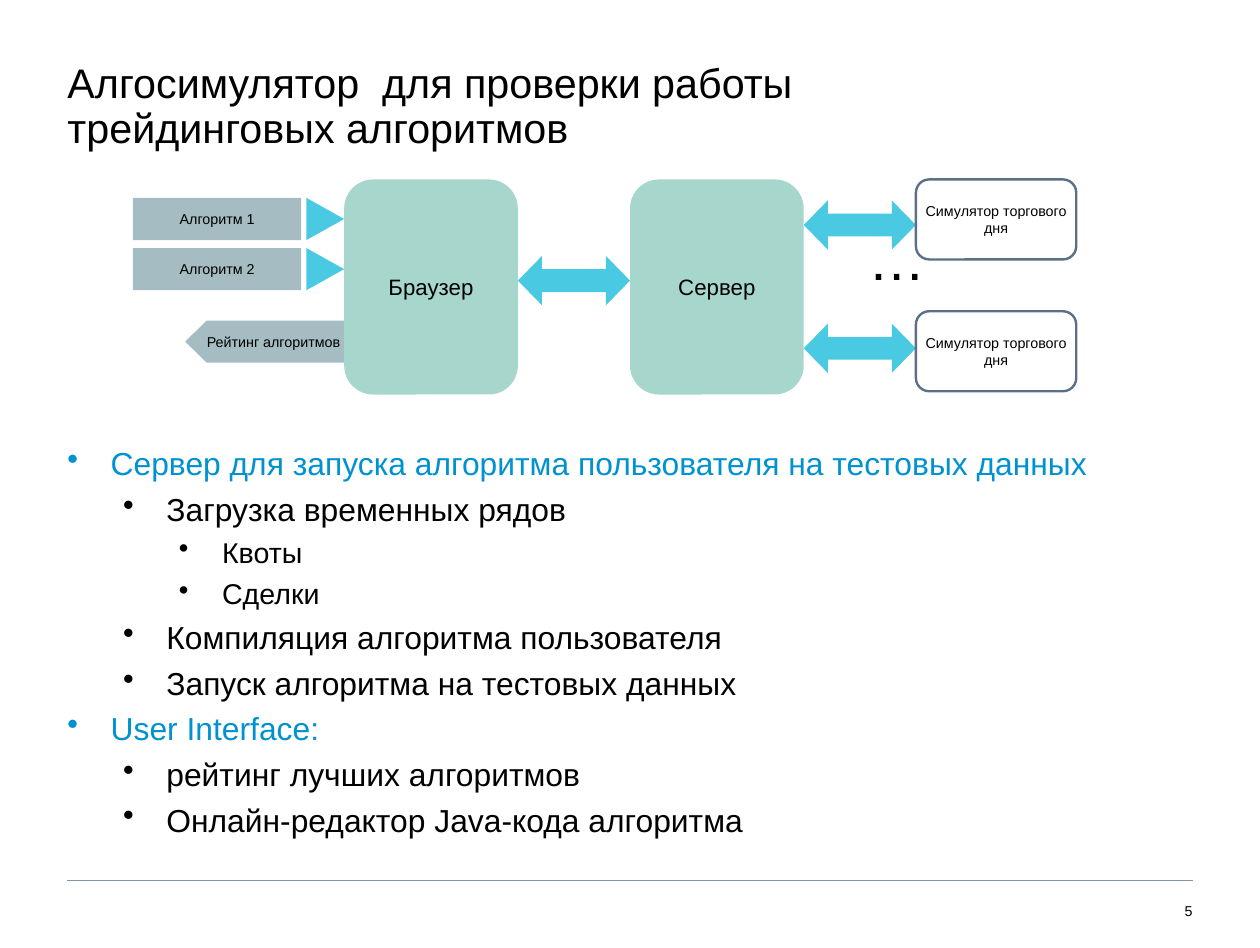
from dataclasses import dataclass

from lxml import etree
from pptx import Presentation
from pptx.dml.color import RGBColor
from pptx.enum.shapes import MSO_CONNECTOR, MSO_SHAPE
from pptx.enum.text import MSO_ANCHOR, MSO_AUTO_SIZE, PP_ALIGN
from pptx.oxml.ns import qn
from pptx.shapes.autoshape import Shape
from pptx.slide import Slide
from pptx.text.text import TextFrame, _Paragraph
from pptx.util import Pt

RECT = MSO_SHAPE.RECTANGLE
ROUNDED = MSO_SHAPE.ROUNDED_RECTANGLE
TRIANGLE = MSO_SHAPE.ISOSCELES_TRIANGLE
PENTAGON = MSO_SHAPE.PENTAGON
DOUBLE_ARROW = MSO_SHAPE.LEFT_RIGHT_ARROW
STRAIGHT = MSO_CONNECTOR.STRAIGHT
TOP, MIDDLE, BOTTOM = MSO_ANCHOR.TOP, MSO_ANCHOR.MIDDLE, MSO_ANCHOR.BOTTOM
LEFT, CENTER, RIGHT = PP_ALIGN.LEFT, PP_ALIGN.CENTER, PP_ALIGN.RIGHT
GROW = MSO_AUTO_SIZE.SHAPE_TO_FIT_TEXT

FONT = "Arial"
BLACK, BLUE, CYAN = "000000", "0092D0", "4AC9E3"
GRAY, MINT, SLATE, RULE = "A4BCC2", "A7D6CD", "5B7086", "8296AA"

MARGIN = 42.5
CONTENT_WIDTH = 708.5
FOOTER_Y = 554.4
BLOCK_TOP, BLOCK_WIDTH, BLOCK_HEIGHT = 113, 109.4, 135.4
ARROW_WIDTH, ARROW_HEIGHT = 70.6, 31
BROWSER_X = 216.7
BROWSER_RIGHT = BROWSER_X + BLOCK_WIDTH
SERVER_X = BROWSER_RIGHT + ARROW_WIDTH
SERVER_RIGHT = SERVER_X + BLOCK_WIDTH
SIMULATOR_X = SERVER_RIGHT + ARROW_WIDTH
ALGORITHM_TOP, ALGORITHM_STEP = 124.6, 31.6
BULLET_INDENTS = (27.2, 62.3, 97.4)
BULLET_HANGING = 27.2


@dataclass(frozen=True)
class Box:
    left: float
    top: float
    width: float
    height: float


@dataclass(frozen=True)
class Node:
    kind: MSO_SHAPE
    box: Box
    fill: str = ""
    outline: str = ""
    label: str = ""
    size: float = 9
    insets: tuple[float, float, float, float] = (0, 0, 0, 0)
    rotation: float = 0
    adjustments: tuple[float, ...] = ()


@dataclass(frozen=True)
class Caption:
    text: str
    box: Box
    size: float
    insets: tuple[float, float, float, float] = (7.2, 3.6, 7.2, 3.6)
    align: PP_ALIGN = LEFT
    anchor: MSO_ANCHOR = TOP
    wrap: bool = False
    grow: bool = False
    spacing: float | Pt | None = None


@dataclass(frozen=True)
class Bullet:
    text: str
    level: int
    size: float = 20
    color: str = BLACK


def rgb(color: str) -> RGBColor:
    return RGBColor.from_string(color)


def lengths(box: Box) -> tuple[Pt, Pt, Pt, Pt]:
    return Pt(box.left), Pt(box.top), Pt(box.width), Pt(box.height)


def add_run(paragraph: _Paragraph, text: str, size: float, color: str = BLACK) -> None:
    run = paragraph.add_run()
    run.text = text
    run.font.name = FONT
    run.font.size = Pt(size)
    run.font.color.rgb = rgb(color)


def set_frame(frame: TextFrame, insets: tuple[float, float, float, float],
              anchor: MSO_ANCHOR, wrap: bool) -> None:
    left, top, right, bottom = insets
    frame.margin_left, frame.margin_top = Pt(left), Pt(top)
    frame.margin_right, frame.margin_bottom = Pt(right), Pt(bottom)
    frame.vertical_anchor = anchor
    frame.word_wrap = wrap


def draw_node(slide: Slide, node: Node) -> Shape:
    shape = slide.shapes.add_shape(node.kind, *lengths(node.box))
    shape.shadow.inherit = False
    shape.rotation = node.rotation
    for index, value in enumerate(node.adjustments):
        shape.adjustments[index] = value
    if node.fill:
        shape.fill.solid()
        shape.fill.fore_color.rgb = rgb(node.fill)
    else:
        shape.fill.background()
    if node.outline:
        shape.line.color.rgb = rgb(node.outline)
        shape.line.width = Pt(1.5)
    else:
        shape.line.fill.background()
    if node.label:
        set_frame(shape.text_frame, node.insets, MIDDLE, True)
        paragraph = shape.text_frame.paragraphs[0]
        paragraph.alignment = CENTER
        add_run(paragraph, node.label, node.size)
    return shape


def draw_caption(slide: Slide, caption: Caption) -> None:
    frame = slide.shapes.add_textbox(*lengths(caption.box)).text_frame
    set_frame(frame, caption.insets, caption.anchor, caption.wrap)
    if caption.grow:
        frame.auto_size = GROW
    paragraph = frame.paragraphs[0]
    paragraph.alignment = caption.align
    paragraph.line_spacing = caption.spacing
    add_run(paragraph, caption.text, caption.size)


def draw_bullets(slide: Slide, box: Box, bullets: list[Bullet]) -> None:
    frame = slide.shapes.add_textbox(*lengths(box)).text_frame
    set_frame(frame, (0, 2.9, 0, 2.9), TOP, True)
    for index, bullet in enumerate(bullets):
        paragraph = frame.add_paragraph() if index else frame.paragraphs[0]
        paragraph.level = bullet.level
        paragraph.line_spacing = 1.07
        paragraph.space_before = Pt(3)
        properties = paragraph._p.get_or_add_pPr()
        properties.set("marL", str(Pt(BULLET_INDENTS[bullet.level])))
        properties.set("indent", str(-Pt(BULLET_HANGING)))
        etree.SubElement(properties, qn("a:buChar")).set("char", "•")
        add_run(paragraph, bullet.text, bullet.size, bullet.color)


def draw_footer_rule(slide: Slide) -> None:
    rule = slide.shapes.add_connector(
        STRAIGHT, Pt(MARGIN), Pt(FOOTER_Y), Pt(MARGIN + CONTENT_WIDTH), Pt(FOOTER_Y))
    rule.line.color.rgb = rgb(RULE)
    rule.line.width = Pt(0.5)
    etree.SubElement(rule._element.spPr, qn("a:effectLst"))


def diagram_nodes() -> list[Node]:
    nodes = []
    for index, label in enumerate(("Алгоритм 1", "Алгоритм 2")):
        top = ALGORITHM_TOP + index * ALGORITHM_STEP
        nodes.append(Node(RECT, Box(83.7, top, 106, 26.6), GRAY, label=label,
                          insets=(3.6, 1.4, 3.6, 1.4)))
        nodes.append(Node(TRIANGLE, Box(191.5, top + 1.4, 26.6, 23.8), CYAN, rotation=90))
    nodes.append(Node(PENTAGON, Box(116.6, 201.8, 100.1, 26.6), GRAY,
                      rotation=180, adjustments=(0.51,)))
    for left, label in ((BROWSER_X, "Браузер"), (SERVER_X, "Сервер")):
        nodes.append(Node(ROUNDED, Box(left, BLOCK_TOP, BLOCK_WIDTH, BLOCK_HEIGHT),
                          MINT, label=label, size=14))
    for left, top in ((BROWSER_RIGHT, 161.2), (SERVER_RIGHT, 203.8), (SERVER_RIGHT, 126.2)):
        nodes.append(Node(DOUBLE_ARROW, Box(left, top, ARROW_WIDTH, ARROW_HEIGHT),
                          CYAN, adjustments=(0.465, 0.489)))
    for top in (BLOCK_TOP, 196):
        nodes.append(Node(ROUNDED, Box(SIMULATOR_X, top, 101, 50.4), outline=SLATE,
                          label="Симулятор торгового дня"))
    return nodes


def main() -> None:
    presentation = Presentation()
    presentation.slide_width, presentation.slide_height = Pt(793.4), Pt(596.9)
    slide = presentation.slides.add_slide(presentation.slide_layouts[6])
    draw_footer_rule(slide)
    draw_caption(slide, Caption("Алгосимулятор  для проверки работы трейдинговых алгоритмов",
                                Box(MARGIN, 39.6, 666, 59.8), 26, (0, 0, 42.5, 0),
                                wrap=True, spacing=0.9))
    draw_caption(slide, Caption("5", Box(708.5, FOOTER_Y, 42.5, 24.5), 9, (0, 2.9, 0, 0),
                                RIGHT, BOTTOM))
    draw_bullets(slide, Box(MARGIN, 275, CONTENT_WIDTH, 373.7), [
        Bullet("Сервер для запуска алгоритма пользователя на тестовых данных", 0, color=BLUE),
        Bullet("Загрузка временных рядов", 1),
        Bullet("Квоты", 2, 18),
        Bullet("Сделки", 2, 18),
        Bullet("Компиляция алгоритма пользователя", 1),
        Bullet("Запуск алгоритма на тестовых данных", 1),
        Bullet("User Interface:", 0, color=BLUE),
        Bullet("рейтинг лучших алгоритмов", 1),
        Bullet("Онлайн-редактор Java-кода алгоритма", 1),
    ])
    for node in diagram_nodes():
        draw_node(slide, node)
    draw_caption(slide, Caption("Рейтинг алгоритмов", Box(123.1, 208.8, 100.1, 15.1), 9,
                                grow=True, spacing=Pt(8)))
    draw_caption(slide, Caption("…", Box(540, 172, 51.1, 21.6), 36,
                                grow=True, spacing=Pt(8)))
    presentation.save("out.pptx")


if __name__ == "__main__":
    main()
